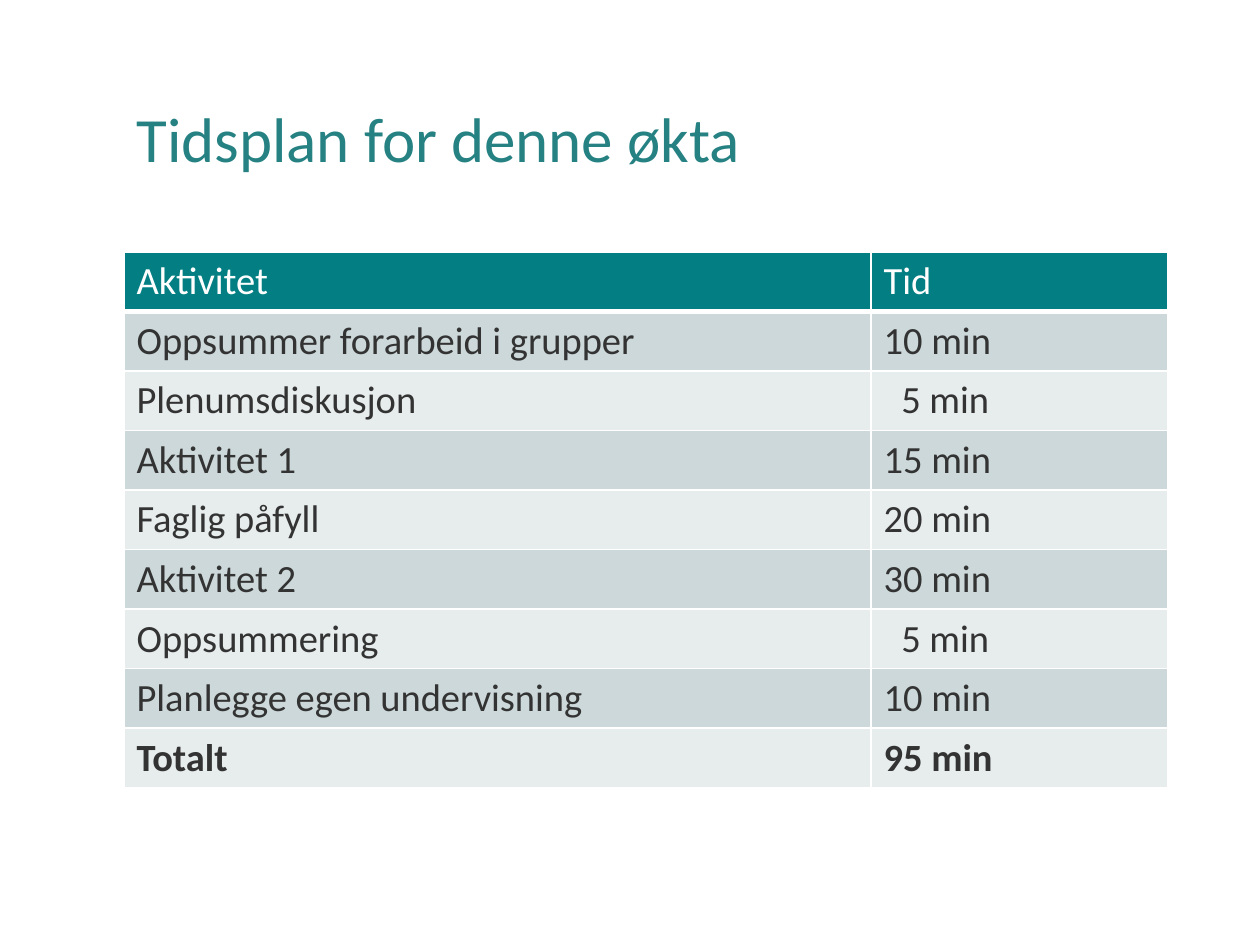
from lxml import etree
from pptx import Presentation
from pptx.dml.color import RGBColor
from pptx.enum import text
from pptx.oxml import ns
from pptx.util import Cm, Pt


def paint(color_format, hex_code):
    color_format.rgb = RGBColor.from_string(hex_code)


def add_border(cell, side, width):
    line = etree.SubElement(cell._tc.get_or_add_tcPr(), ns.qn(f"a:ln{side}"), w=str(Pt(width)))
    fill = etree.SubElement(line, ns.qn("a:solidFill"))
    etree.SubElement(fill, ns.qn("a:srgbClr"), val="FFFFFF")


deck = Presentation()
deck.slide_width, deck.slide_height = Cm(25.4), Cm(19.05)
slide = deck.slides.add_slide(deck.slide_layouts[6])
left, width = Cm(2.5), Cm(21.05)

# Heading
heading = slide.shapes.add_textbox(left, Cm(1.02), width, Cm(3.68)).text_frame
heading.word_wrap = True
heading.vertical_anchor = text.MSO_ANCHOR.MIDDLE
title = heading.paragraphs[0]
title.text = "Tidsplan for denne økta"
title.line_spacing = 0.9
title.font.name, title.font.size = "Calibri", Pt(36)
paint(title.font.color, "268183")

# Schedule
schedule = [
    ("Aktivitet", "Tid"),
    ("Oppsummer forarbeid i grupper", "10 min"),
    ("Plenumsdiskusjon", "5 min"),
    ("Aktivitet 1", "15 min"),
    ("Faglig påfyll", "20 min"),
    ("Aktivitet 2", "30 min"),
    ("Oppsummering", "5 min"),
    ("Planlegge egen undervisning", "10 min"),
    ("Totalt", "95 min"),
]
row_height = Cm(1.2)
timetable = slide.shapes.add_table(
    len(schedule), 2, left, Cm(5.08), width, row_height * len(schedule)).table
timetable.columns[0].width = Cm(15.06)
timetable.columns[1].width = Cm(5.99)

for row, entry in enumerate(schedule):
    timetable.rows[row].height = row_height
    is_header, is_total = row == 0, row == len(schedule) - 1
    band = "037F83" if is_header else ("E7ECED", "CCD8D9")[row % 2]
    for column, wording in enumerate(entry):
        cell = timetable.cell(row, column)
        for side in "LRTB":
            heavy = (is_header and side == "B") or (row == 1 and side == "T")
            add_border(cell, side, 3 if heavy else 1)
        cell.fill.solid()
        paint(cell.fill.fore_color, band)
        # Single-digit minutes are indented to line up with the others
        if wording == "5 min":
            cell.margin_left = Cm(0.61)
        line = cell.text_frame.paragraphs[0]
        line.text = wording
        line.font.name, line.font.size, line.font.bold = "Calibri", Pt(22), is_total
        paint(line.font.color, "FFFFFF" if is_header else "333333")

deck.save("out.pptx")
